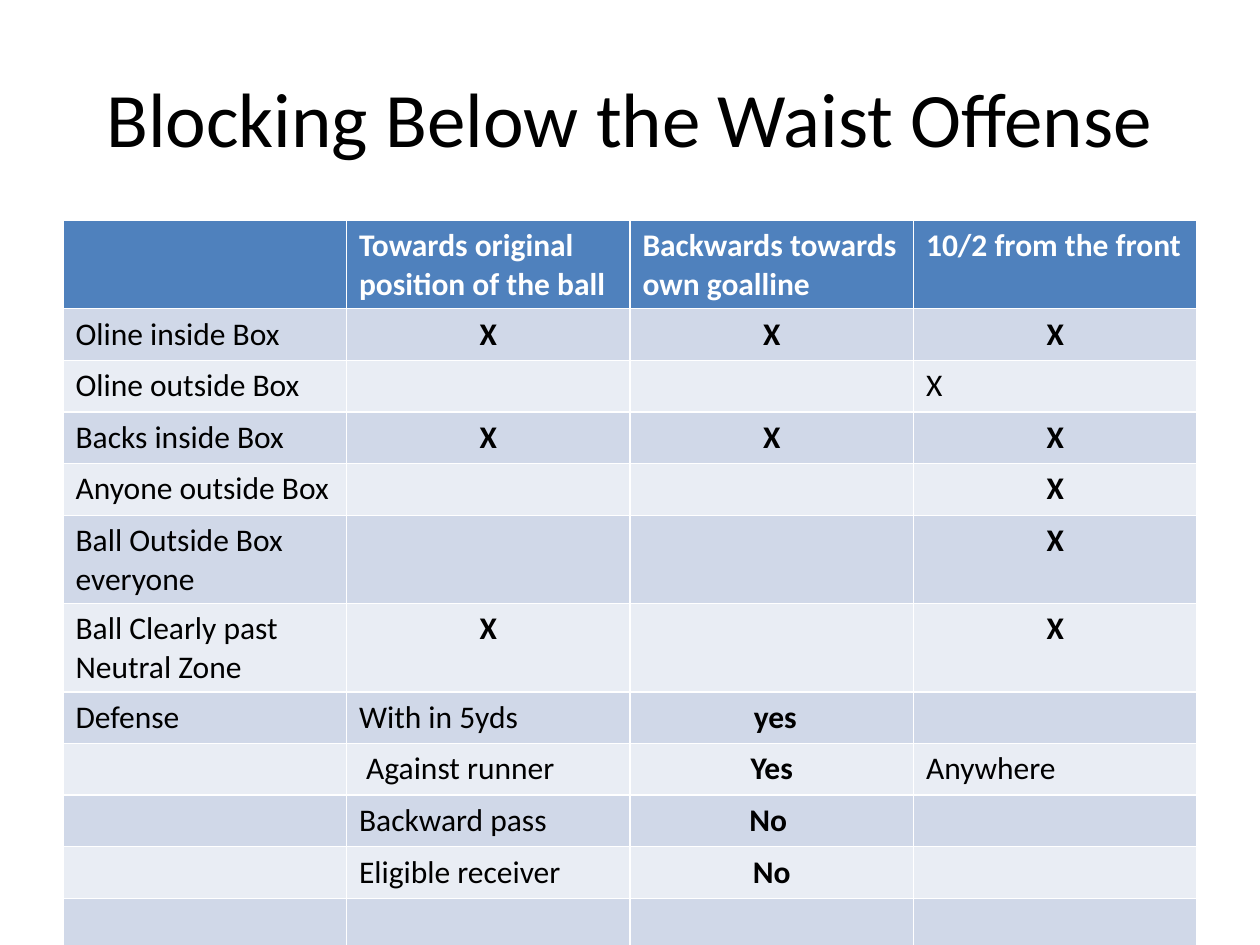
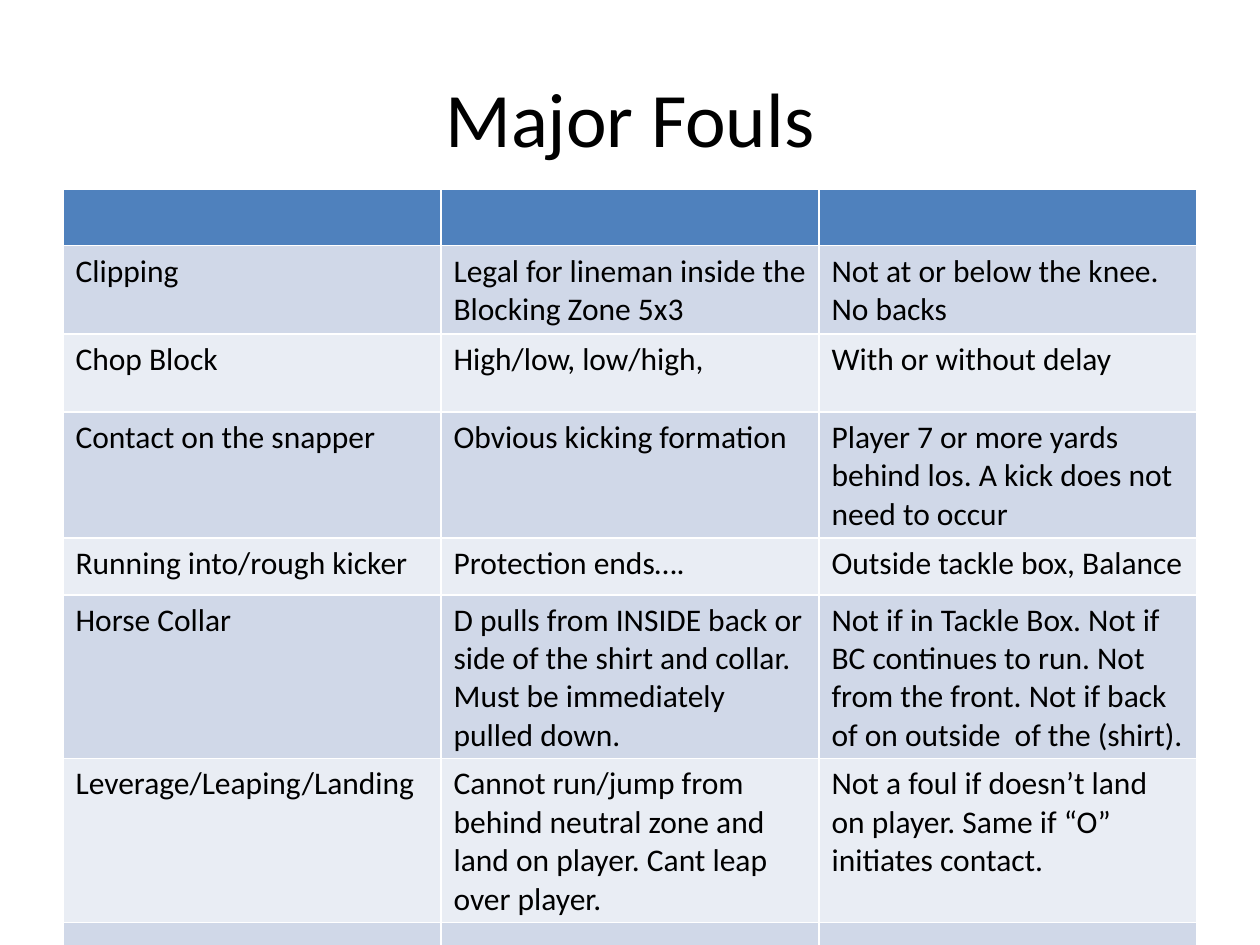
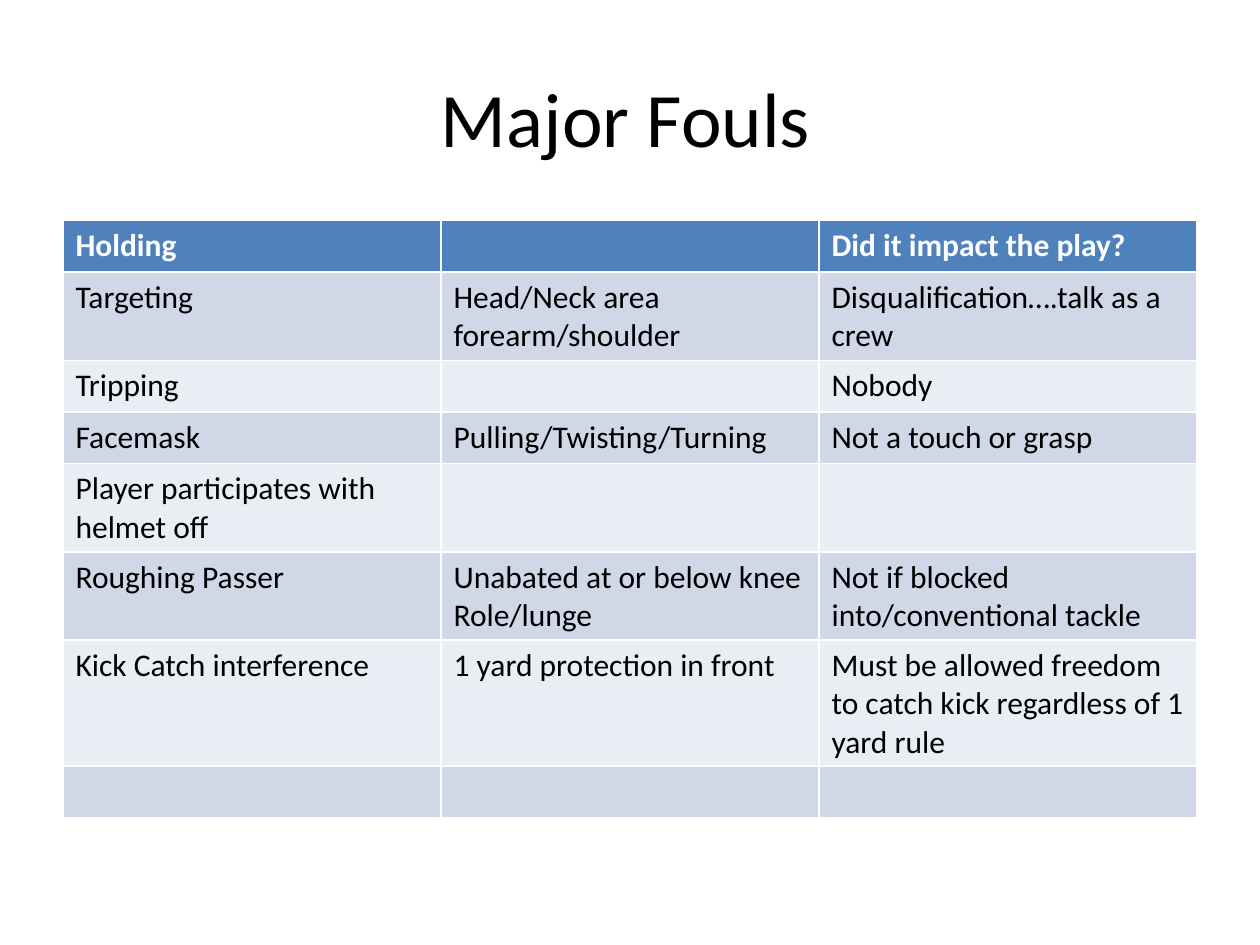
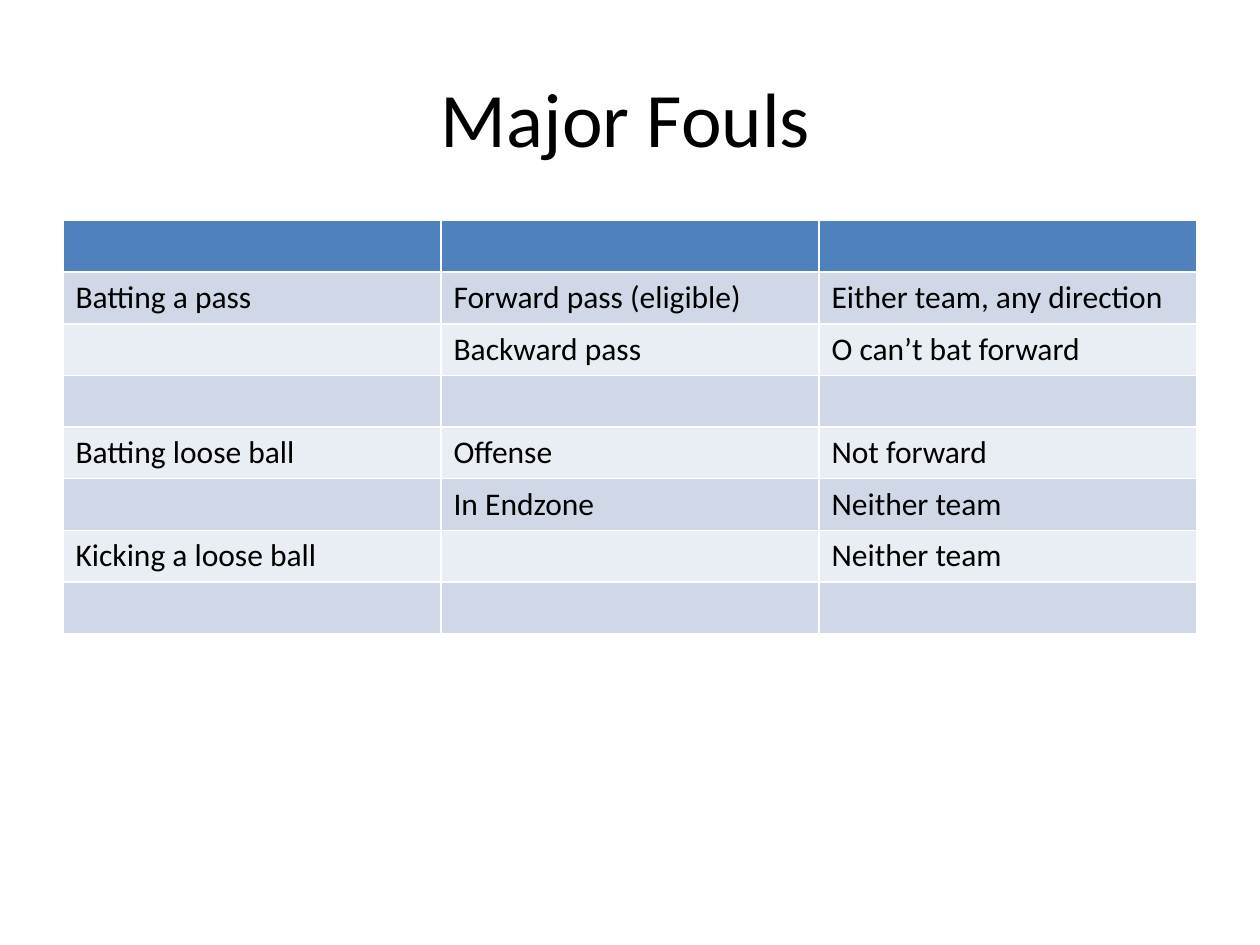
"""Build four slides of football foul tables."""
from dataclasses import dataclass

from pptx import Presentation
from pptx.dml.color import RGBColor
from pptx.enum.text import MSO_ANCHOR, PP_ALIGN
from pptx.util import Inches, Pt


@dataclass(frozen=True)
class Theme:
    font: str = "Calibri"
    title_size: int = 44
    cell_size: int = 18
    ink: str = "000000"
    header_ink: str = "FFFFFF"
    header_band: str = "4F81BD"
    dark_band: str = "D0D8E8"
    light_band: str = "E9EDF4"


THEME = Theme()
LEFT, CONTENT_WIDTH = 0.5, 9
VERDICTS = {"X", " yes", "Yes", "No ", "No"}
LEFT_ALIGNED_ROW = "Oline outside Box"


def add_run(paragraph, text, size, color, bold=False):
    run = paragraph.add_run()
    run.text = text
    run.font.name = THEME.font
    run.font.size = Pt(size)
    run.font.bold = bold
    run.font.color.rgb = RGBColor.from_string(color)


blocking = [
    ["", "Towards original position of the ball", "Backwards towards own goalline", "10/2 from the front"],
    ["Oline inside Box", "X", "X", "X"],
    ["Oline outside Box", "", "", "X"],
    ["Backs inside Box", "X", "X", "X"],
    ["Anyone outside Box", "", "", "X"],
    ["Ball Outside Box everyone", "", "", "X"],
    ["Ball Clearly past Neutral Zone", "X", "", "X"],
    ["Defense", "With in 5yds", " yes", ""],
    ["", " Against runner", "Yes", "Anywhere"],
    ["", "Backward pass", "No ", ""],
    ["", "Eligible receiver", "No", ""],
    [""] * 4,
]
contact_fouls = [
    [""] * 3,
    ["Clipping", "Legal for lineman inside the Blocking Zone 5x3", "Not at or below the knee. No backs"],
    ["Chop Block", "High/low, low/high,", "With or without delay"],
    ["Contact on the snapper", "Obvious kicking formation",
     "Player 7 or more yards behind los. A kick does not need to occur"],
    ["Running into/rough kicker", "Protection ends….", "Outside tackle box, Balance"],
    ["Horse Collar",
     "D pulls from INSIDE back or side of the shirt and collar. Must be immediately pulled down.",
     "Not if in Tackle Box. Not if BC continues to run. Not from the front. "
     "Not if back of on outside  of the (shirt)."],
    ["Leverage/Leaping/Landing",
     "Cannot run/jump from behind neutral zone and land on player. Cant leap over player.",
     "Not a foul if doesn’t land on player. Same if “O” initiates contact."],
    [""] * 3,
]
safety_fouls = [
    ["Holding", "", "Did it impact the play?"],
    ["Targeting", "Head/Neck area forearm/shoulder", "Disqualification….talk as a crew"],
    ["Tripping", "", "Nobody"],
    ["Facemask", "Pulling/Twisting/Turning", "Not a touch or grasp"],
    ["Player participates with helmet off", "", ""],
    ["Roughing Passer", "Unabated at or below knee\nRole/lunge", "Not if blocked into/conventional tackle"],
    ["Kick Catch interference", "1 yard protection in front",
     "Must be allowed freedom to catch kick regardless of 1 yard rule"],
    [""] * 3,
]
batting_fouls = [
    [""] * 3,
    ["Batting a pass", "Forward pass (eligible)", "Either team, any direction"],
    ["", "Backward pass", "O can’t bat forward"],
    [""] * 3,
    ["Batting loose ball", "Offense", "Not forward"],
    ["", "In Endzone", "Neither team"],
    ["Kicking a loose ball", "", "Neither team"],
    [""] * 3,
]
contact_heights = [0.45, 0.62, 0.62, 0.88, 0.45, 1.14, 1.14, 0.79]
pages = [
    ("Blocking Below the Waist Offense", blocking, 1.75, 5.75, [0.41] * 12),
    ("Major Fouls", contact_fouls, 1.5, 6.9, contact_heights),
    ("Major Fouls\t", safety_fouls, 1.75, 4.72, [0.41] * 8),
    ("Major Fouls\t", batting_fouls, 1.75, 3.24, [0.41] * 8),
]

deck = Presentation()
deck.slide_width, deck.slide_height = Inches(10), Inches(7.5)

for heading, rows, top, height, row_heights in pages:
    slide = deck.slides.add_slide(deck.slide_layouts[6])
    title = slide.shapes.add_textbox(Inches(LEFT), Inches(0.3), Inches(CONTENT_WIDTH), Inches(1.25))
    title.text_frame.word_wrap = True
    title.text_frame.vertical_anchor = MSO_ANCHOR.MIDDLE
    title_line = title.text_frame.paragraphs[0]
    title_line.alignment = PP_ALIGN.CENTER
    add_run(title_line, heading, THEME.title_size, THEME.ink)

    frame = slide.shapes.add_table(
        len(rows), len(rows[0]), Inches(LEFT), Inches(top), Inches(CONTENT_WIDTH), Inches(height))
    fouls = frame.table
    for table_row, row_height in zip(fouls.rows, row_heights):
        table_row.height = Inches(row_height)
    frame.height = Inches(height)

    for row_index, row in enumerate(rows):
        is_header = row_index == 0
        if is_header:
            band, ink = THEME.header_band, THEME.header_ink
        else:
            band, ink = (THEME.dark_band if row_index % 2 else THEME.light_band), THEME.ink
        for column_index, text in enumerate(row):
            cell = fouls.cell(row_index, column_index)
            cell.fill.solid()
            cell.fill.fore_color.rgb = RGBColor.from_string(band)
            if not text:
                continue
            is_verdict = text in VERDICTS and row[0] != LEFT_ALIGNED_ROW
            for line_index, line in enumerate(text.split("\n")):
                paragraph = cell.text_frame.add_paragraph() if line_index else cell.text_frame.paragraphs[0]
                if is_verdict:
                    paragraph.alignment = PP_ALIGN.CENTER
                add_run(paragraph, line, THEME.cell_size, ink, is_header or is_verdict)

deck.save("out.pptx")
